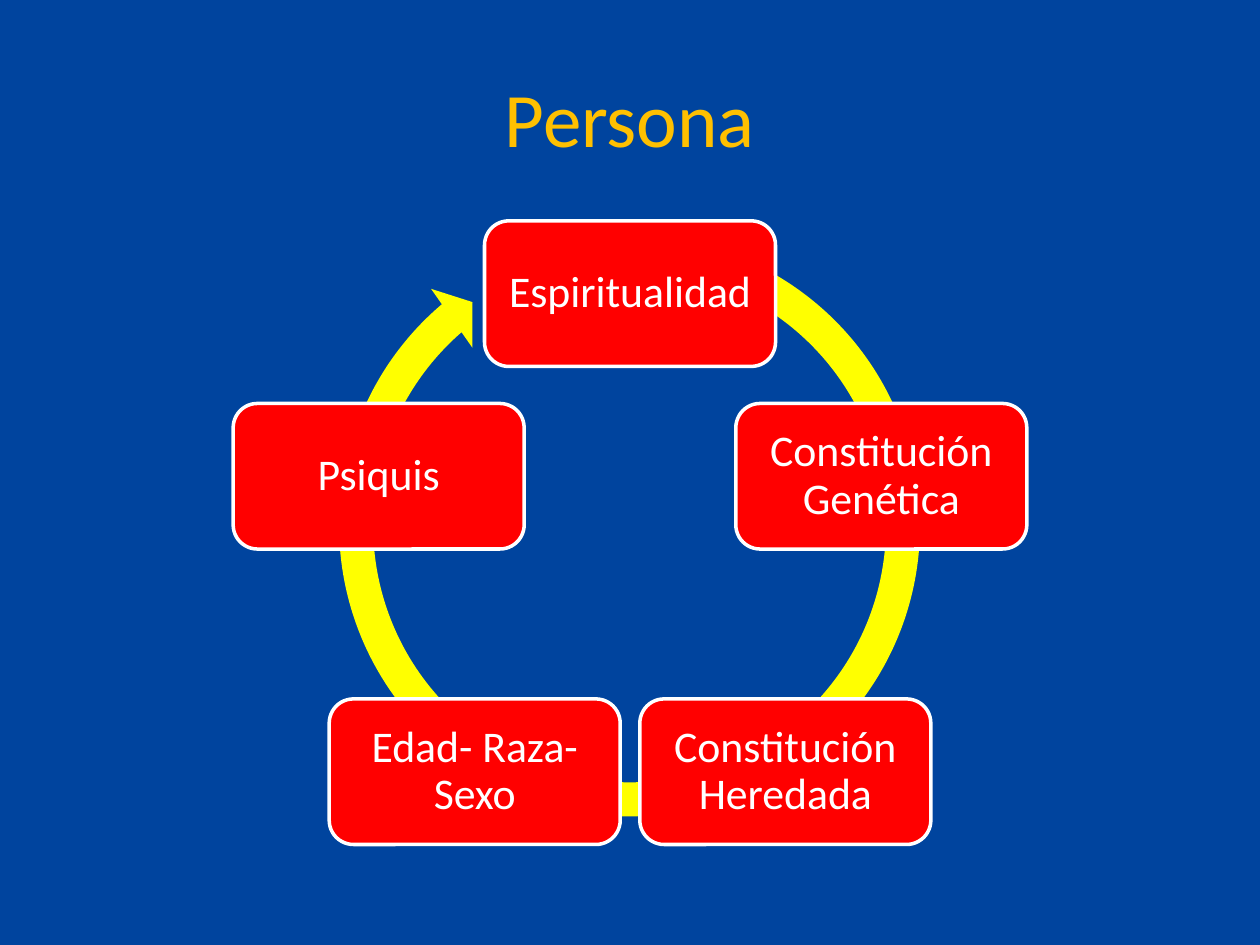
from dataclasses import dataclass
from math import cos, pi, sin

from pptx import Presentation
from pptx.dml.color import RGBColor
from pptx.enum.shapes import MSO_SHAPE
from pptx.enum.text import MSO_ANCHOR, PP_ALIGN
from pptx.shapes.autoshape import Shape
from pptx.slide import Slide
from pptx.util import Pt

ROUND_RECT = MSO_SHAPE.ROUNDED_RECTANGLE
CIRCULAR_ARROW = MSO_SHAPE.CIRCULAR_ARROW
MIDDLE = MSO_ANCHOR.MIDDLE
CENTER = PP_ALIGN.CENTER


@dataclass(frozen=True)
class Theme:
    font: str = "Calibri"
    background: str = "00449E"
    title: str = "FFC000"
    arrow: str = "FFFF00"
    node: str = "FF0000"
    light: str = "FFFFFF"
    title_size: float = 44
    node_size: float = 25
    border: float = 2


@dataclass(frozen=True)
class Box:
    left: float
    top: float
    width: float
    height: float

    def lengths(self) -> list[Pt]:
        return [Pt(v) for v in (self.left, self.top, self.width, self.height)]


@dataclass(frozen=True)
class Ring:
    x: float
    y: float
    radius: float
    node_width: float
    node_height: float

    def node_box(self, index: int, count: int) -> Box:
        angle = 2 * pi * index / count
        return Box(
            self.x + self.radius * sin(angle) - self.node_width / 2,
            self.y - self.radius * cos(angle) - self.node_height / 2,
            self.node_width,
            self.node_height,
        )


THEME = Theme()
TITLE_BOX = Box(36, 21.6, 648, 90)
ARROW_BOX = Box(183, 123.8, 353.5, 353.5)
ARROW_ADJUSTMENTS = (0.055, 3.307, 137.657, 173.922, 0.058)
RING = Ring(360, 318.8, 151, 166.3, 83.2)
NODES = (
    "Espiritualidad",
    "Constitución Genética",
    "Constitución Heredada",
    "Edad- Raza- Sexo",
    "Psiquis",
)


def rgb(value: str) -> RGBColor:
    return RGBColor.from_string(value)


def write(shape: Shape, text: str, size: float, color: str,
          inset: float, spacing: float) -> None:
    tf = shape.text_frame
    frame_format = {
        "word_wrap": True,
        "vertical_anchor": MIDDLE,
        "margin_left": Pt(inset),
        "margin_right": Pt(inset),
        "margin_top": Pt(inset),
        "margin_bottom": Pt(inset),
    }
    for name, value in frame_format.items():
        setattr(tf, name, value)
    p = tf.paragraphs[0]
    p.alignment = CENTER
    p.line_spacing = spacing
    r = p.add_run()
    r.text = text
    for name, value in {"name": THEME.font, "size": Pt(size)}.items():
        setattr(r.font, name, value)
    r.font.color.rgb = rgb(color)


def add_filled(s: Slide, kind: MSO_SHAPE, box: Box, color: str) -> Shape:
    sp = s.shapes.add_shape(kind, *box.lengths())
    sp.shadow.inherit = False
    sp.fill.solid()
    sp.fill.fore_color.rgb = rgb(color)
    return sp


def add_title(s: Slide, text: str) -> None:
    sp = s.shapes.add_textbox(*TITLE_BOX.lengths())
    write(sp, text, THEME.title_size, THEME.title, inset=4, spacing=1.0)


def add_cycle_arrow(s: Slide) -> None:
    sp = add_filled(s, CIRCULAR_ARROW, ARROW_BOX, THEME.arrow)
    sp.line.fill.background()
    for i, value in enumerate(ARROW_ADJUSTMENTS):
        sp.adjustments[i] = value


def add_node(s: Slide, text: str, box: Box) -> None:
    sp = add_filled(s, ROUND_RECT, box, THEME.node)
    sp.line.color.rgb = rgb(THEME.light)
    sp.line.width = Pt(THEME.border)
    write(sp, text, THEME.node_size, THEME.light, inset=4, spacing=0.9)


def main() -> None:
    prs = Presentation()
    prs.slide_width, prs.slide_height = Pt(720), Pt(540)
    s = prs.slides.add_slide(prs.slide_layouts[6])
    s.background.fill.solid()
    s.background.fill.fore_color.rgb = rgb(THEME.background)
    add_title(s, "Persona")
    add_cycle_arrow(s)
    for i, text in enumerate(NODES):
        add_node(s, text, RING.node_box(i, len(NODES)))
    prs.save("out.pptx")


if __name__ == "__main__":
    main()
